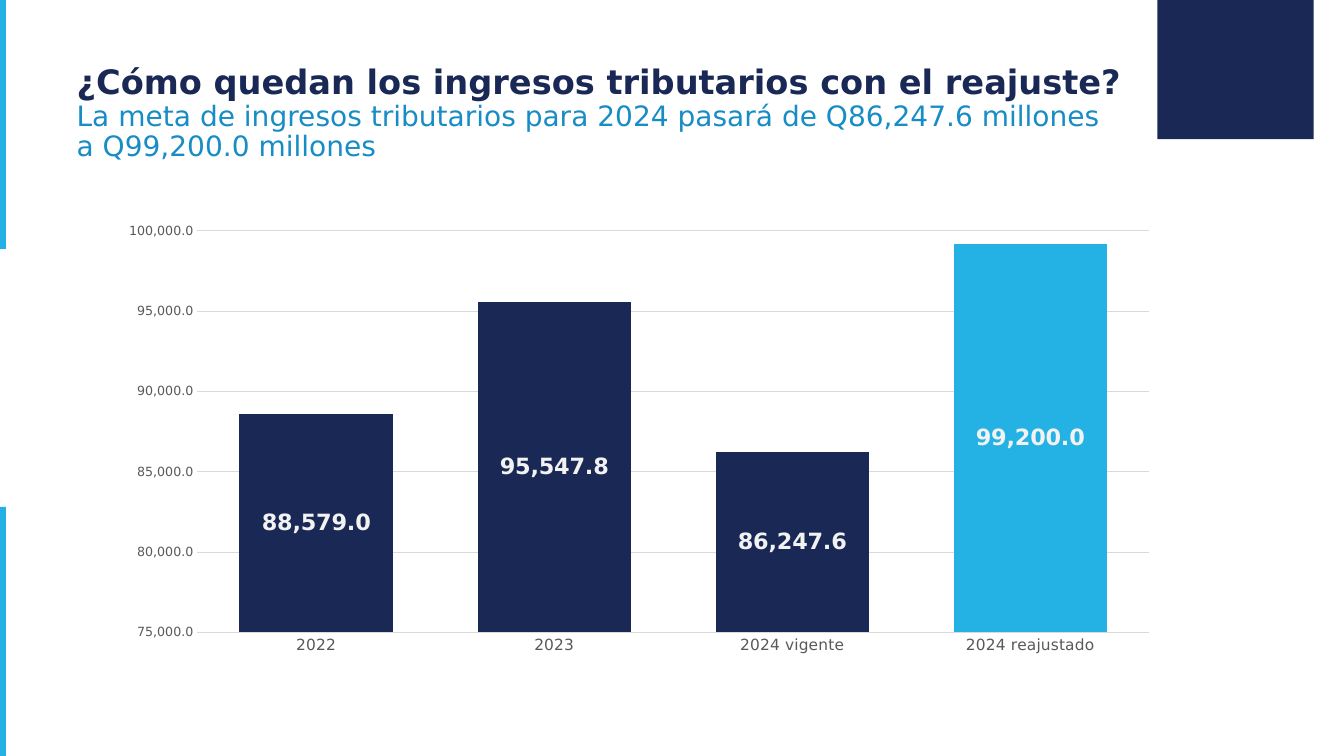
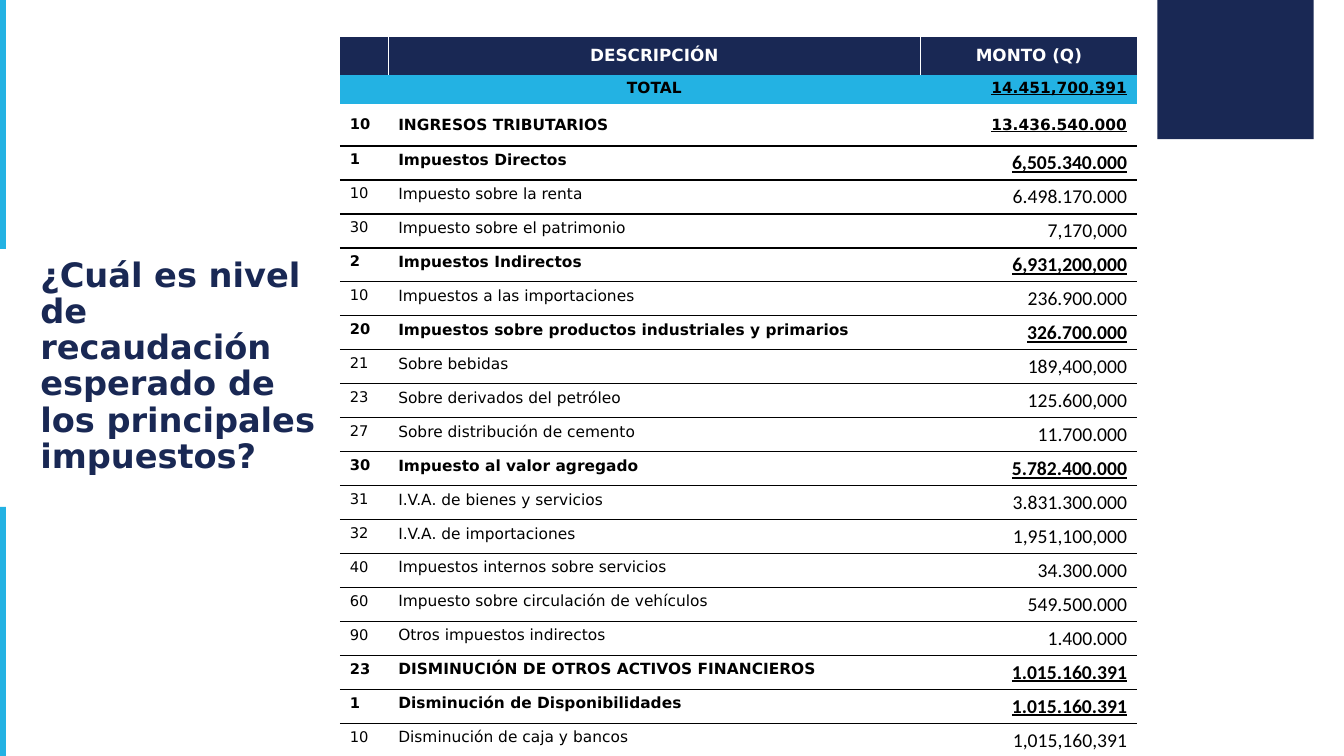
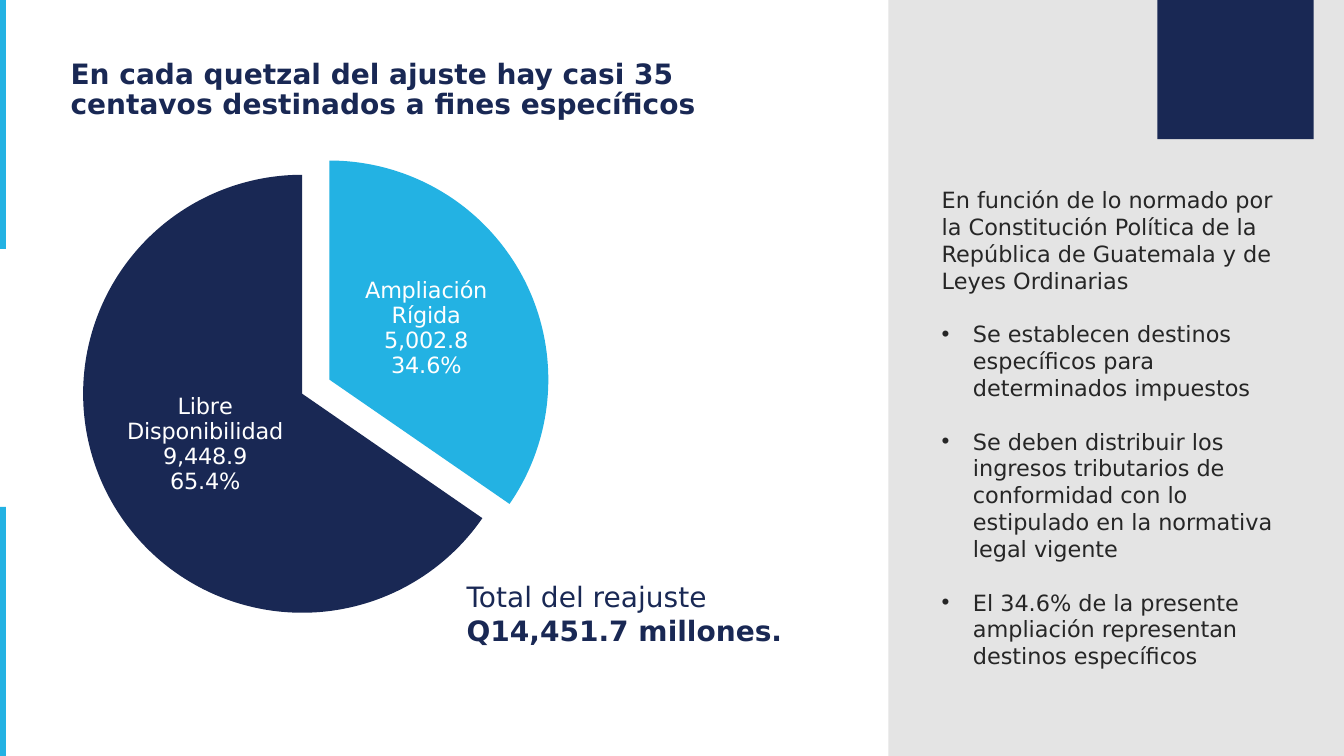
import pptx
import pptx.chart.data
import pptx.dml.color
import pptx.enum.chart
import pptx.enum.shapes
import pptx.enum.text
import pptx.oxml.ns
import pptx.util
from lxml import etree

Inches, Pt, qn = pptx.util.Inches, pptx.util.Pt, pptx.oxml.ns.qn
ALIGN, ANCHOR = pptx.enum.text.PP_ALIGN, pptx.enum.text.MSO_ANCHOR

COLORS = {"navy": "192854", "cyan": "23B2E3", "blue": "178CC5", "white": "FFFFFF",
          "black": "000000", "dark": "262626", "axis": "595959", "grid": "D9D9D9",
          "label": "F2F2F2"}
FONT, AMOUNT_FONT = "DejaVu Sans", "Calibri"
TITLE = {"size": 24, "bold": True, "color": "navy"}
NO_STYLE = "{2D5ABB26-0587-4C30-8999-92F81FD0307C}"

BARS = [("2022", 88579), ("2023", 95547.8), ("2024 vigente", 86247.6),
        ("2024 reajustado", 99200)]
SLICES = [("Ampliación\nRígida", 5002.8), ("Libre\nDisponibilidad", 9448.9)]

# code, description, amount, whether the row is a subtotal
HEADER = ("", "DESCRIPCIÓN", "MONTO (Q)")
TOTAL = ("", "TOTAL", "14.451,700,391")
TAXES = [
    ("10", "INGRESOS TRIBUTARIOS", "13.436.540.000", True),
    ("1", "Impuestos Directos", "6,505.340.000", True),
    ("10", "Impuesto sobre la renta", "6.498.170.000", False),
    ("30", "Impuesto sobre el patrimonio", "7,170,000", False),
    ("2", "Impuestos Indirectos", "6,931,200,000", True),
    ("10", "Impuestos a las importaciones", "236.900.000", False),
    ("20", "Impuestos sobre productos industriales y primarios", "326.700.000", True),
    ("21", "Sobre bebidas", "189,400,000", False),
    ("23", "Sobre derivados del petróleo", "125.600,000", False),
    ("27", "Sobre distribución de cemento", "11.700.000", False),
    ("30", "Impuesto al valor agregado", "5.782.400.000", True),
    ("31", "I.V.A. de bienes y servicios", "3.831.300.000", False),
    ("32", "I.V.A. de importaciones", "1,951,100,000", False),
    ("40", "Impuestos internos sobre servicios", "34.300.000", False),
    ("60", "Impuesto sobre circulación de vehículos", "549.500.000", False),
    ("90", "Otros impuestos indirectos", "1.400.000", False),
    ("23", "DISMINUCIÓN DE OTROS ACTIVOS FINANCIEROS", "1.015.160.391", True),
    ("1", "Disminución de Disponibilidades", "1.015.160.391", True),
    ("10", "Disminución de caja y bancos", "1,015,160,391", False),
]
RULES = ["En función de lo normado por la Constitución Política de la República de "
         "Guatemala y de Leyes Ordinarias",
         "Se establecen destinos específicos para determinados impuestos",
         "Se deben distribuir los ingresos tributarios de conformidad con lo estipulado "
         "en la normativa legal vigente",
         "El 34.6% de la presente ampliación representan destinos específicos"]


# Shared helpers
def rgb(name):
    return pptx.dml.color.RGBColor.from_string(COLORS[name])


def inches(box):
    return [Inches(v) for v in box]


def style(font, size, color, name=FONT, **attrs):
    for key, value in {"size": Pt(size), "name": name, **attrs}.items():
        setattr(font, key, value)
    font.color.rgb = rgb(color)


def paint(target, color):
    target.fill.solid()
    target.fill.fore_color.rgb = rgb(color)


def write(tf, lines, line_spacing=None):
    """Write one paragraph for each (text, format) pair."""
    for i, (text, fmt) in enumerate(lines):
        p = tf.paragraphs[0] if i == 0 else tf.add_paragraph()
        p.alignment, p.line_spacing = ALIGN.LEFT, line_spacing
        r = p.add_run()
        r.text = text
        style(r.font, **fmt)


def place(sp, box):
    sp.left, sp.top, sp.width, sp.height = inches(box)
    sp.text_frame.word_wrap = True
    sp.text_frame.auto_size = pptx.enum.text.MSO_AUTO_SIZE.NONE


def add_title(s, box, lines):
    place(s.shapes.title, box)
    tf = s.shapes.title.text_frame
    tf.vertical_anchor = ANCHOR.MIDDLE
    write(tf, lines, 0.9)


def add_rect(s, box, color):
    sp = s.shapes.add_shape(pptx.enum.shapes.MSO_SHAPE.RECTANGLE, *inches(box))
    sp.shadow.inherit = False
    paint(sp, color)
    sp.line.fill.background()
    return sp


def add_corner(s):
    add_rect(s, (11.48, 0, 1.55, 1.38), "navy")


def add_edge_bands(prs, s):
    """Put the left edge bands on the master, so that every slide has them."""
    for top in (0, 5.03):
        sp = add_rect(s, (0, top, 0.06, 2.47), "cyan")
        prs.slide_master.shapes.element.append(sp.element)


def add_chart(s, box, kind, pairs, size):
    data = pptx.chart.data.CategoryChartData(number_format="#,##0.0")
    data.categories = [name for name, _ in pairs]
    data.add_series("Series 1", [value for _, value in pairs])
    chart = s.shapes.add_chart(kind, *inches(box), data).chart
    chart.has_title = chart.has_legend = False
    style(chart.font, size, "black")
    return chart


# Slide 1: columns
def add_columns(s, box):
    chart = add_chart(s, box, pptx.enum.chart.XL_CHART_TYPE.COLUMN_CLUSTERED, BARS, 10)
    plot = chart.plots[0]
    plot.gap_width, plot.overlap, plot.vary_by_categories = 55, -27, False
    series = plot.series[0]
    paint(series.format, "navy")
    paint(series.points[3].format, "cyan")

    labels = series.data_labels
    labels.show_value = True
    labels.number_format, labels.number_format_is_linked = "#,##0.0", False
    labels.position = pptx.enum.chart.XL_LABEL_POSITION.CENTER
    style(labels.font, 16, "label", bold=True)

    cat, val = chart.category_axis, chart.value_axis
    for axis, size in ((cat, 11), (val, 9)):
        axis.major_tick_mark = pptx.enum.chart.XL_TICK_MARK.NONE
        style(axis.tick_labels.font, size, "axis")
    for line in (cat.format.line, val.major_gridlines.format.line):
        line.color.rgb, line.width = rgb("grid"), Pt(0.75)
    val.format.line.fill.background()
    val.minimum_scale, val.maximum_scale, val.major_unit = 75000, 100000, 5000
    val.tick_labels.number_format = "#,##0.0"
    val.tick_labels.number_format_is_linked = False


def build_income(s):
    subtitle = {"size": 20, "bold": False, "color": "blue"}
    add_title(s, (0.66, 0.4, 10.66, 1.46), [
        ("¿Cómo quedan los ingresos tributarios con el reajuste?", TITLE),
        ("La meta de ingresos tributarios para 2024 pasará de Q86,247.6 millones", subtitle),
        ("a Q99,200.0 millones", subtitle)])
    add_columns(s, (1.07, 2.13, 10.54, 4.46))
    add_corner(s)


# Slide 2: table
def add_border(cell, side, color):
    ln = etree.SubElement(cell._tc.get_or_add_tcPr(), qn("a:ln" + side), w=str(Pt(1)))
    fill = etree.SubElement(ln, qn("a:solidFill"))
    etree.SubElement(fill, qn("a:srgbClr"), val=COLORS[color])


def fill_cell(cell, text, align, anchor, fmt):
    cell.vertical_anchor = anchor
    p = cell.text_frame.paragraphs[0]
    p.alignment = align
    if text:
        r = p.add_run()
        r.text = text
        style(r.font, **fmt)
    else:
        etree.SubElement(p._p, qn("a:endParaRPr"), sz=str(fmt["size"] * 100))


def add_tax_table(s, box):
    widths, heights = (0.48, 5.28, 2.15), [0.38, 0.28, 0.42] + [0.33] * 18
    table = s.shapes.add_table(len(heights), len(widths), *inches(box)).table
    table.first_row = table.horz_banding = False
    table._tbl.tblPr.find(qn("a:tableStyleId")).text = NO_STYLE
    for column, width in zip(table.columns, widths):
        column.width = Inches(width)
    for row, height in zip(table.rows, heights):
        row.height = Inches(height)

    # Header and total
    for c, (head, total) in enumerate(zip(HEADER, TOTAL)):
        cell = table.cell(0, c)
        fill_cell(cell, head, ALIGN.CENTER, ANCHOR.MIDDLE,
                  {"size": 12, "color": "white", "bold": True})
        for side in "LRT":
            add_border(cell, side, "white")
        paint(cell, "navy")
        cell = table.cell(1, c)
        fill_cell(cell, total, ALIGN.RIGHT if c == 2 else ALIGN.CENTER, ANCHOR.TOP,
                  {"size": 11, "color": "black", "bold": True, "underline": c == 2})
        paint(cell, "cyan")

    # Taxes
    for i, (*texts, bold) in enumerate(TAXES):
        amount = (11, FONT) if i == 0 else (14, AMOUNT_FONT)
        for c, (size, name) in enumerate([(10.5, FONT), (11, FONT), amount]):
            cell = table.cell(i + 2, c)
            fill_cell(cell, texts[c], ALIGN.RIGHT if c == 2 else ALIGN.LEFT,
                      ANCHOR.MIDDLE if i == 0 else ANCHOR.TOP,
                      {"size": size, "name": name, "color": "black", "bold": bold,
                       "underline": bold and c == 2})
            if i < len(TAXES) - 1:
                add_border(cell, "B", "black")
            cell.fill.background()


def build_taxes(s):
    add_title(s, (0.3, 1.76, 3.07, 3.76), [
        ("¿Cuál es nivel de recaudación esperado de los principales impuestos?", TITLE)])
    add_corner(s)
    add_tax_table(s, (3.37, 0.36, 7.91, 7.09))


# Slide 3: pie and side panel
def add_pie(s, box):
    chart = add_chart(s, box, pptx.enum.chart.XL_CHART_TYPE.PIE, SLICES, 14)
    plot = chart.plots[0]
    plot.vary_by_categories = False
    series = plot.series[0]
    for i, color in enumerate(("cyan", "navy")):
        paint(series.points[i].format, color)
    explosion = etree.Element(qn("c:explosion"), val="7")
    series._element.find(qn("c:dPt")).addprevious(explosion)

    labels = series.data_labels
    for part in ("value", "percentage", "category_name"):
        setattr(labels, "show_" + part, True)
    labels.number_format, labels.number_format_is_linked = "0.0%", False
    labels.position = pptx.enum.chart.XL_LABEL_POSITION.CENTER
    style(labels.font, 16, "white")
    separator = etree.Element(qn("c:separator"))
    separator.text = "\n"
    labels._element.find(qn("c:showBubbleSize")).addnext(separator)

    # Fixed plot area
    area = chart._chartSpace.find(".//" + qn("c:plotArea"))
    for old in area.findall(qn("c:layout")):
        area.remove(old)
    layout = etree.Element(qn("c:layout"))
    area.insert(0, layout)
    manual = etree.SubElement(layout, qn("c:manualLayout"))
    for tag, value in (("layoutTarget", "inner"), ("xMode", "edge"), ("yMode", "edge"),
                       ("x", "0.24"), ("y", "0.085"), ("w", "0.526"), ("h", "0.82")):
        etree.SubElement(manual, qn("c:" + tag), val=value)


def add_panel(s, box):
    left, top, width, height = box
    panel = add_rect(s, box, "grid")
    color = panel.fill._xPr.find(".//" + qn("a:srgbClr"))
    etree.SubElement(color, qn("a:alpha"), val="70000")

    body = s.placeholders[1]
    place(body, (left + 0.43, top + 1.8, width - 0.87, height - 2.28))
    write(body.text_frame, [(text, {"size": 16, "color": "dark"}) for text in RULES])
    for i, p in enumerate(body.text_frame.paragraphs):
        p.space_before = Pt(19 if i else 0)
        pPr = p._p.get_or_add_pPr()
        indent = Inches(0.31) if i else 0
        pPr.set("marL", str(indent))
        pPr.set("indent", str(-indent))
        if i:
            etree.SubElement(pPr, qn("a:buFont"), typeface="Arial")
            etree.SubElement(pPr, qn("a:buChar"), char="•")
        else:
            etree.SubElement(pPr, qn("a:buNone"))
    s.shapes.element.append(body.element)


def build_split(s):
    add_title(s, (0.6, 0.2, 6.93, 1.39), [
        ("En cada quetzal del ajuste hay casi 35 centavos destinados a fines específicos",
         {**TITLE, "size": 20})])
    add_pie(s, (-1.4, 1.03, 9.01, 5.67))
    sp = s.shapes.add_textbox(*inches((4.53, 5.7, 3.84, 0.77)))
    sp.text_frame.word_wrap = True
    write(sp.text_frame, [
        ("Total del reajuste", {"size": 20, "color": "navy"}),
        ("Q14,451.7 millones.", {"size": 20, "color": "navy", "bold": True})])
    add_panel(s, (8.81, 0, 4.52, 7.5))
    add_corner(s)


def main():
    prs = pptx.Presentation()
    prs.slide_width, prs.slide_height = Inches(13.33), Inches(7.5)
    title_only, title_body = prs.slide_layouts[5], prs.slide_layouts[1]
    for build, layout in ((build_income, title_only), (build_taxes, title_only),
                          (build_split, title_body)):
        build(prs.slides.add_slide(layout))
    add_edge_bands(prs, prs.slides[0])
    prs.save("out.pptx")


if __name__ == "__main__":
    main()
